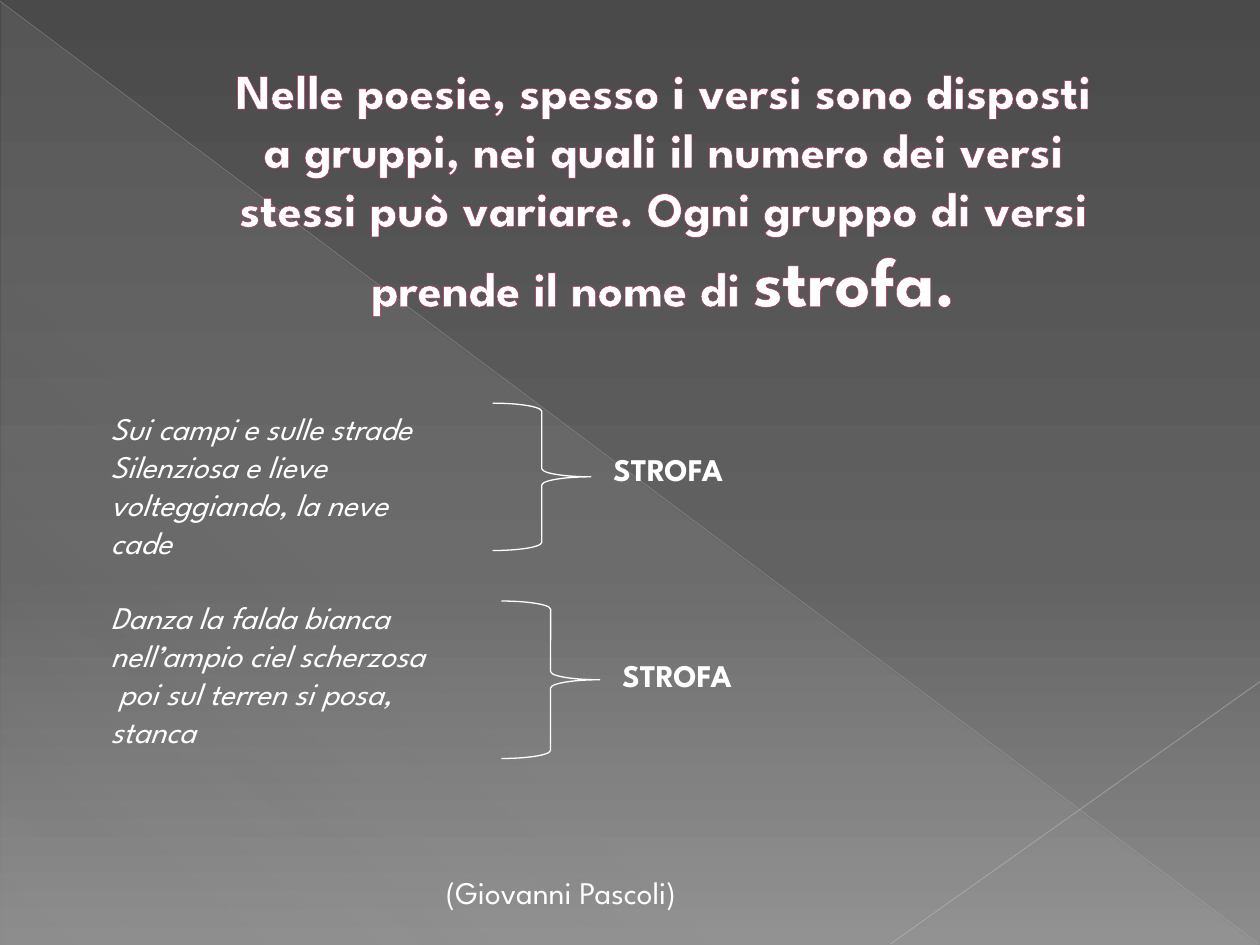
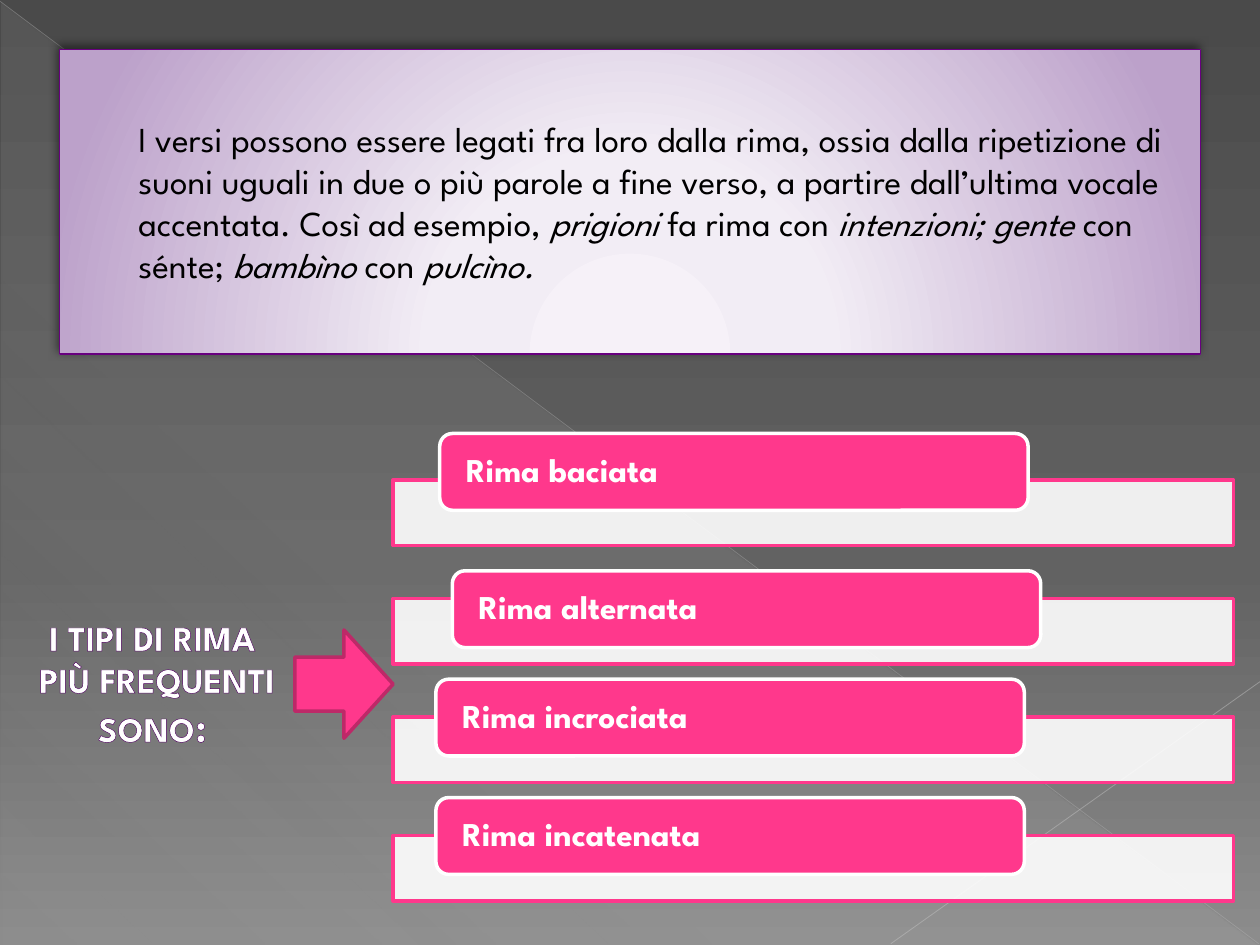
from dataclasses import dataclass

from pptx import Presentation
from pptx.dml.color import RGBColor
from pptx.enum.shapes import MSO_CONNECTOR, MSO_SHAPE
from pptx.enum.text import MSO_ANCHOR, MSO_AUTO_SIZE, PP_ALIGN
from pptx.oxml import parse_xml
from pptx.oxml.ns import nsdecls, qn
from pptx.util import Inches, Pt


# Theme: colours, type sizes and gradients
@dataclass(frozen=True)
class Theme:
    font: str = "League Spartan"
    white: str = "FFFFFF"
    black: str = "000000"
    pink: str = "FF388C"
    dark_pink: str = "BD2968"
    title_edge: str = "B12761"
    label_edge: str = "4D005E"
    purple: str = "68007F"
    ray: str = "BFBFBF"
    short_ray: str = "C6C6C6"
    title: int = 28
    key_word: int = 40
    body: int = 18
    intro: int = 20
    tab: int = 19
    colon: int = 24
    page: tuple = ((0, "4A4A4A", 100), (60, "626262", 100), (100, "8C8C8C", 100))
    veil: tuple = ((0, "D2D2D2", 10), (70, "D2D2D2", 8), (100, "D2D2D2", 1))
    lilac: tuple = ((0, "F6F1F8", 100), (34, "F2EDF5", 100), (100, "BCA1CA", 100))


T = Theme()
LINEAR = '<a:lin {ns} ang="{ang}" scaled="0"/>'
GLOW = ('<a:path {ns} path="circle"><a:fillToRect l="50000" t="155000" '
        'r="50000" b="-55000"/></a:path>')


def xml(template, **values):
    return parse_xml(template.format(ns=nsdecls("a"), **values))


def set_alpha(parent, percent):
    for clr in parent.iter(qn("a:srgbClr")):
        clr.append(xml('<a:alpha {ns} val="{val}"/>', val=percent * 1000))


def set_gradient(grad, stops, direction):
    """Replace the stops and the direction of a gradFill element."""
    for child in list(grad):
        grad.remove(child)
    gs_lst = xml("<a:gsLst {ns}/>")
    for pos, color, alpha in stops:
        gs = xml('<a:gs {ns} pos="{pos}"><a:srgbClr val="{color}"/></a:gs>',
                 pos=pos * 1000, color=color)
        if alpha < 100:
            set_alpha(gs, alpha)
        gs_lst.append(gs)
    grad.append(gs_lst)
    grad.append(direction)


def linear(degrees):
    return xml(LINEAR, ang=degrees * 60000)


class Deck:
    def __init__(self):
        self.prs = Presentation()
        self.prs.slide_width, self.prs.slide_height = Inches(10), Inches(7.5)
        self.s = None

    def new_slide(self):
        """Start a slide with the shared background, veil and rays."""
        self.s = self.prs.slides.add_slide(self.prs.slide_layouts[6])
        self.s.background.fill.gradient()
        grad = self.s.element.find(".//" + qn("a:gradFill"))
        set_gradient(grad, T.page, linear(90))
        veil = self.shape(MSO_SHAPE.RIGHT_TRIANGLE, 0.01, 0.02, 9.98, 7.48)
        self.gradient(veil, T.veil, linear(133))
        self.line(0, 0.01, 9.99, 7.49, T.ray, 0.39, 35)
        self.line(10, 5.41, 7.07, 7.49, T.short_ray, 0.47, 45)

    def gradient(self, sp, stops, direction):
        sp.fill.gradient()
        set_gradient(sp._element.spPr.find(qn("a:gradFill")), stops, direction)

    def line(self, x1, y1, x2, y2, color, width, alpha):
        ln = self.s.shapes.add_connector(
            MSO_CONNECTOR.STRAIGHT, *map(Inches, (x1, y1, x2, y2)))
        ln.line.color.rgb = RGBColor.from_string(color)
        ln.line.width = Pt(width)
        sp_pr = ln._element.spPr
        set_alpha(sp_pr, alpha)
        sp_pr.append(xml("<a:effectLst {ns}/>"))

    def shape(self, kind, x, y, w, h, fill=None, line=None, width=0.75):
        sp = self.s.shapes.add_shape(kind, *map(Inches, (x, y, w, h)))
        sp.shadow.inherit = False
        if fill:
            sp.fill.solid()
            sp.fill.fore_color.rgb = RGBColor.from_string(fill)
        else:
            sp.fill.background()
        if line:
            sp.line.color.rgb = RGBColor.from_string(line)
            sp.line.width = Pt(width)
        else:
            sp.line.fill.background()
        return sp

    def text_box(self, x, y, w, h, paragraphs, grow=True, **style):
        sp = self.s.shapes.add_textbox(*map(Inches, (x, y, w, h)))
        if grow:
            sp.text_frame.auto_size = MSO_AUTO_SIZE.SHAPE_TO_FIT_TEXT
        self.set_text(sp, paragraphs, **style)
        return sp

    def set_text(self, sp, paragraphs, size=T.body, color=T.white, bold=False,
                 italic=False, edge=None, align=PP_ALIGN.LEFT, indent=0,
                 anchor=MSO_ANCHOR.TOP):
        """Each paragraph is a list of (text, font changes) runs."""
        tf = sp.text_frame
        tf.word_wrap, tf.vertical_anchor = True, anchor
        base = {"name": T.font, "size": size, "bold": bold, "italic": italic}
        for i, runs in enumerate(paragraphs):
            p = tf.paragraphs[0] if i == 0 else tf.add_paragraph()
            p.alignment = align
            if indent:
                p._p.get_or_add_pPr().set("marL", str(Inches(indent)))
            for text, changes in runs:
                r = p.add_run()
                r.text = text
                for name, value in {**base, **changes}.items():
                    setattr(r.font, name, Pt(value) if name == "size" else value)
                r.font.color.rgb = RGBColor.from_string(color)
                if edge:
                    r._r.get_or_add_rPr().insert(0, xml(
                        '<a:ln {ns} w="{w}"><a:solidFill><a:srgbClr val="{c}"/>'
                        "</a:solidFill></a:ln>", c=edge[0], w=Pt(edge[1])))
        return tf


def plain(*lines):
    return [[(line, {})] for line in lines]


def stanza_slide(deck):
    deck.new_slide()
    # Definition
    deck.text_box(1.17, 0.29, 7.66, 2.44, [[
        ("Nelle poesie, spesso i versi sono disposti a gruppi, nei quali il "
         "numero dei versi stessi può variare. Ogni gruppo di versi prende il "
         "nome di ", {}),
        ("strofa.", {"size": T.key_word})]],
        grow=False, size=T.title, bold=True, edge=(T.title_edge, 0.5),
        align=PP_ALIGN.CENTER, indent=0.53, anchor=MSO_ANCHOR.MIDDLE)

    # Poem in two stanzas
    first = ["Sui campi e sulle strade", "Silenziosa e lieve",
             "volteggiando, la neve", "cade"]
    second = ["Danza la falda bianca", "nell’ampio ciel scherzosa",
              " poi sul terren si posa,", "stanca"]
    poem = deck.text_box(0.78, 3.2, 3.52, 2.83, plain(*first, *second), italic=True)
    poem.text_frame.paragraphs[len(first)].space_before = Pt(21.6)

    # A brace and a label for each stanza
    for x, y, h, label_y, label_w in ((3.91, 3.2, 1.17, 3.52, 1.88),
                                      (3.98, 4.77, 1.25, 5.16, 1.72)):
        deck.shape(MSO_SHAPE.RIGHT_BRACE, x, y, 0.78, h, line=T.white)
        deck.text_box(x + 0.86, label_y, label_w, 0.4, plain("STROFA"), bold=True)

    deck.text_box(3.44, 6.88, 2.42, 0.4, plain("(Giovanni Pascoli)"))


def rhyme_slide(deck):
    deck.new_slide()
    # Lilac panel with the definition
    panel = deck.shape(MSO_SHAPE.RECTANGLE, 0.47, 0.39, 9.06, 2.42, line=T.purple)
    deck.gradient(panel, T.lilac, xml(GLOW))
    panel._element.spPr.find(qn("a:effectLst")).append(xml(
        '<a:outerShdw {ns} blurRad="{blur}" dist="{dist}" dir="{dir}" '
        'rotWithShape="0"><a:srgbClr val="{c}"><a:alpha val="50000"/>'
        "</a:srgbClr></a:outerShdw>",
        blur=Pt(5), dist=Pt(2), dir=245 * 60000, c=T.black))
    example = {"italic": True}
    deck.set_text(panel, [[
        ("I versi possono essere legati fra loro dalla rima, ossia dalla "
         "ripetizione di suoni uguali in due o più parole a fine verso, a "
         "partire dall’ultima vocale accentata. Così ad esempio, ", {}),
        ("prigioni ", example), ("fa rima con ", {}),
        ("intenzioni; gente ", example), ("con sénte; ", {}),
        ("bambìno", example), (" con ", {}), ("pulcìno.", example)]],
        size=T.intro, color=T.black, edge=(T.title_edge, 0.5), indent=0.53,
        anchor=MSO_ANCHOR.MIDDLE)

    # Rhyme types: a pale bar under each pink tab
    tabs = (("Rima baciata", 3.49, 3.44), ("Rima alternata", 3.59, 4.53),
            ("Rima incrociata", 3.46, 5.39), ("Rima incatenata", 3.46, 6.33))
    for i, (name, x, y) in enumerate(tabs):
        bar = deck.shape(MSO_SHAPE.RECTANGLE, 3.12, 3.81 + 0.94 * i, 6.67, 0.52,
                         T.white, T.pink, 2)
        set_alpha(bar._element.spPr.find(qn("a:solidFill")), 90)
        tab = deck.shape(MSO_SHAPE.ROUNDED_RECTANGLE, x, y, 4.67, 0.61,
                         T.pink, T.white, 2)
        tf = deck.set_text(tab, plain(name), size=T.tab, bold=True,
                           anchor=MSO_ANCHOR.MIDDLE)
        tf.margin_left = tf.margin_right = Inches(0.18)
        tf.margin_top = tf.margin_bottom = 0
        tf.paragraphs[0].line_spacing = 0.9

    # Label and arrow
    deck.text_box(0, 4.84, 2.42, 1.18, [
        [("I TIPI DI RIMA", {})],
        [(" PIÙ FREQUENTI SONO", {}), (":", {"size": T.colon})]],
        size=T.intro, bold=True, edge=(T.label_edge, 0.71), align=PP_ALIGN.CENTER)
    deck.shape(MSO_SHAPE.RIGHT_ARROW, 2.34, 5, 0.78, 0.86, T.pink, T.dark_pink, 2)


def main():
    deck = Deck()
    stanza_slide(deck)
    rhyme_slide(deck)
    deck.prs.save("out.pptx")


if __name__ == "__main__":
    main()
